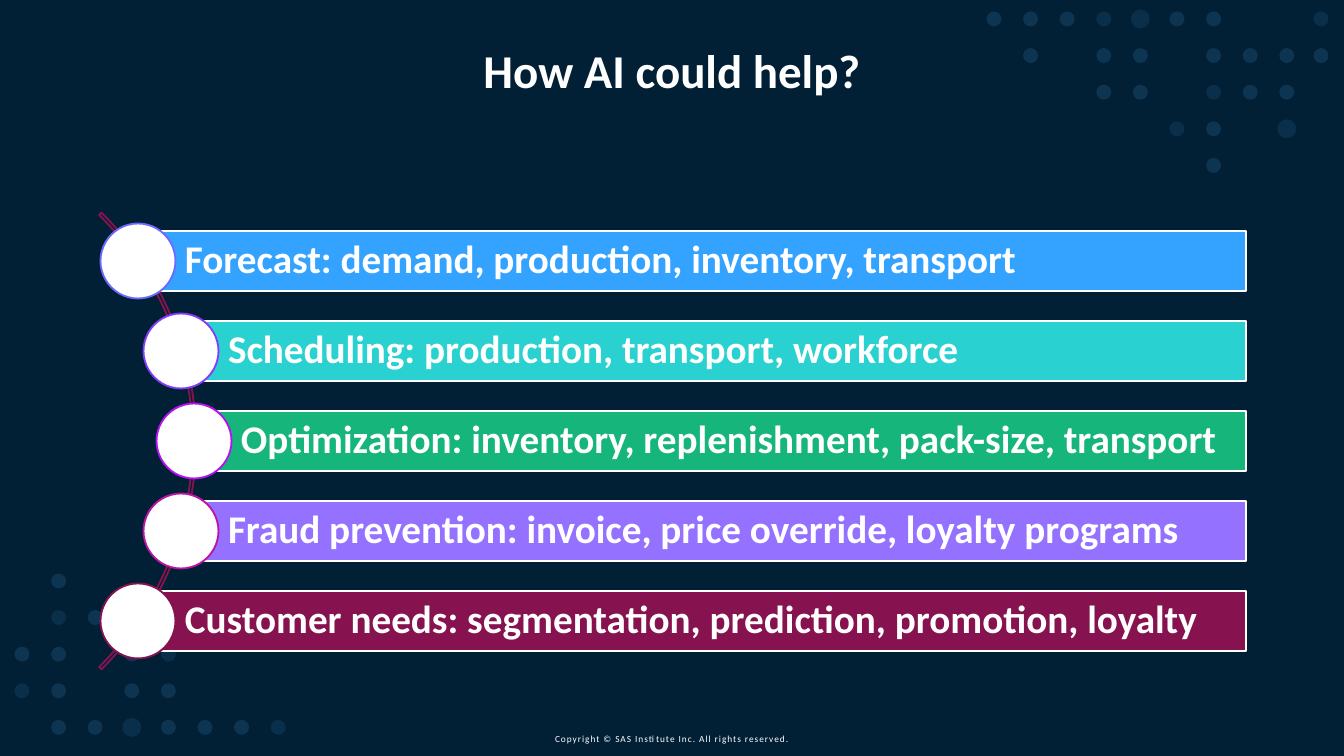
"""Build the slide "How AI could help?" with five labelled bars along an arc."""
from dataclasses import dataclass

from lxml.etree import SubElement
from pptx import Presentation
from pptx.dml.color import RGBColor
from pptx.enum.shapes import MSO_SHAPE
from pptx.enum.text import MSO_ANCHOR, MSO_AUTO_SIZE, PP_ALIGN
from pptx.oxml.ns import qn
from pptx.util import Pt

SLIDE_WIDTH, SLIDE_HEIGHT = 1344, 756
EMU_PER_PX = 9144000 / SLIDE_WIDTH
DOT_PITCH = 36.6
LAST_DOT_X = 1321
DOT_STYLES = {"o": (15, 14), "x": (15, 10), "O": (19, 10)}
TOP_DOTS = ["oooxOoo--x", "-o-oo-oooo", "---oo-xoo", "-----xo-O", "------o"]
BOTTOM_DOTS = ["-o", "-xo", "oo-ox", "xo-oo", "-ooOooox"]
BAR_TOP, BAR_RIGHT, BAR_HEIGHT, BAR_PITCH = 231, 1246, 60, 90
CIRCLE_SIZE = 75
USES = [
    ("Forecast: demand, production, inventory, transport", 138, "33A3FF", "6D69FF"),
    ("Scheduling: production, transport, workforce", 181, "2AD1D1", "853CF9"),
    ("Optimization: inventory, replenishment, pack-size, transport", 194, "15B57B", "B811EF"),
    ("Fraud prevention: invoice, price override, loyalty programs", 181, "9471FF", "BA13A6"),
    ("Customer needs: segmentation, prediction, promotion, loyalty", 138, "86134F", "86134F"),
]


@dataclass(frozen=True)
class Theme:
    """Colours, font and type sizes of the slide."""
    background: str = "012036"
    white: str = "FFFFFF"
    dot: str = "5CB5FF"
    arc: str = "86134F"
    font: str = "Calibri"
    title_size: float = 25.2
    bar_size: float = 21
    footer_size: float = 5


def px(length):
    """Turn px into EMU."""
    return round(length * EMU_PER_PX)


class SlideBuilder:
    """Draws the elements of one slide in one theme."""

    def __init__(self, slide, theme):
        """Keep the slide and theme and paint the background."""
        self.slide, self.theme = slide, theme
        slide.background.fill.solid()
        slide.background.fill.fore_color.rgb = RGBColor.from_string(theme.background)

    def set_text(self, shape, text, size, align, anchor, bold=True, line_spacing=0.9):
        """Put one formatted paragraph into a shape and return its run."""
        frame = shape.text_frame
        frame.text = text
        frame.word_wrap = True
        frame.auto_size = MSO_AUTO_SIZE.NONE
        frame.vertical_anchor = anchor
        paragraph = frame.paragraphs[0]
        paragraph.alignment = align
        paragraph.line_spacing = line_spacing
        run = paragraph.runs[0]
        run.font.name, run.font.size, run.font.bold = self.theme.font, Pt(size), bold
        run.font.color.rgb = RGBColor.from_string(self.theme.white)
        return run

    def shape(self, kind, left, top, width, height, fill=None, line=None):
        """Add a preset shape with an optional fill and 1 pt outline."""
        shape = self.slide.shapes.add_shape(kind, px(left), px(top), px(width), px(height))
        shape.shadow.inherit = False
        if fill:
            shape.fill.solid()
            shape.fill.fore_color.rgb = RGBColor.from_string(fill)
        else:
            shape.fill.background()
        if line:
            shape.line.color.rgb = RGBColor.from_string(line)
            shape.line.width = Pt(1)
        else:
            shape.line.fill.background()
        return shape

    def title(self, text):
        """Place and fill the title placeholder."""
        title = self.slide.shapes.title
        title.left, title.top, title.width, title.height = map(px, (93, 40, 1158, 67))
        self.set_text(title, text, self.theme.title_size, PP_ALIGN.CENTER, MSO_ANCHOR.MIDDLE)

    def footer(self, text):
        """Add the letter-spaced copyright line."""
        box = self.slide.shapes.add_textbox(px(487), px(726), px(370), px(25))
        run = self.set_text(box, text, self.theme.footer_size, PP_ALIGN.CENTER,
                            MSO_ANCHOR.BOTTOM, bold=False, line_spacing=1.0)
        run._r.get_or_add_rPr().set("spc", "50")

    def dots(self, first_x, first_y, rows):
        """Draw a grid of translucent dots from pattern rows."""
        for row, pattern in enumerate(rows):
            for column, mark in enumerate(pattern):
                if mark in DOT_STYLES:
                    center_x = min(first_x + column * DOT_PITCH, LAST_DOT_X)
                    self.dot(center_x, first_y + row * DOT_PITCH, *DOT_STYLES[mark])

    def dot(self, center_x, center_y, size, opacity):
        """Draw one dot with an opacity in percent."""
        shape = self.shape(MSO_SHAPE.OVAL, center_x - size / 2, center_y - size / 2,
                           size, size, self.theme.dot)
        color = shape._element.spPr.find(".//" + qn("a:srgbClr"))
        SubElement(color, qn("a:alpha"), val=str(opacity * 1000))

    def arc(self):
        """Draw the thin arc that links the circles."""
        arc = self.shape(MSO_SHAPE.BLOCK_ARC, -450, 118, 646, 646, line=self.theme.arc)
        for index, value in enumerate((189, 27, 0.005)):
            arc.adjustments[index] = value

    def bar(self, index, text, left, fill, ring):
        """Draw one labelled bar with a circle centred on its left end."""
        top = BAR_TOP + index * BAR_PITCH
        bar = self.shape(MSO_SHAPE.RECTANGLE, left, top, BAR_RIGHT - left, BAR_HEIGHT,
                         fill, self.theme.white)
        frame = bar.text_frame
        frame.margin_left = px(47)
        frame.margin_right = frame.margin_top = frame.margin_bottom = px(8)
        self.set_text(bar, text, self.theme.bar_size, PP_ALIGN.LEFT, MSO_ANCHOR.MIDDLE)
        self.shape(MSO_SHAPE.OVAL, left - CIRCLE_SIZE / 2,
                   top + (BAR_HEIGHT - CIRCLE_SIZE) / 2, CIRCLE_SIZE, CIRCLE_SIZE,
                   self.theme.white, ring)


def main():
    """Build and save the presentation."""
    presentation = Presentation()
    presentation.slide_width, presentation.slide_height = px(SLIDE_WIDTH), px(SLIDE_HEIGHT)
    slide = presentation.slides.add_slide(presentation.slide_layouts[5])
    builder = SlideBuilder(slide, Theme())
    builder.footer("Copyright © SAS Institute Inc. All rights reserved.")
    builder.dots(994, 19, TOP_DOTS)
    builder.dots(22, 581, BOTTOM_DOTS)
    builder.title("How AI could help?")
    builder.arc()
    for index, use in enumerate(USES):
        builder.bar(index, *use)
    presentation.save("out.pptx")


if __name__ == "__main__":
    main()
